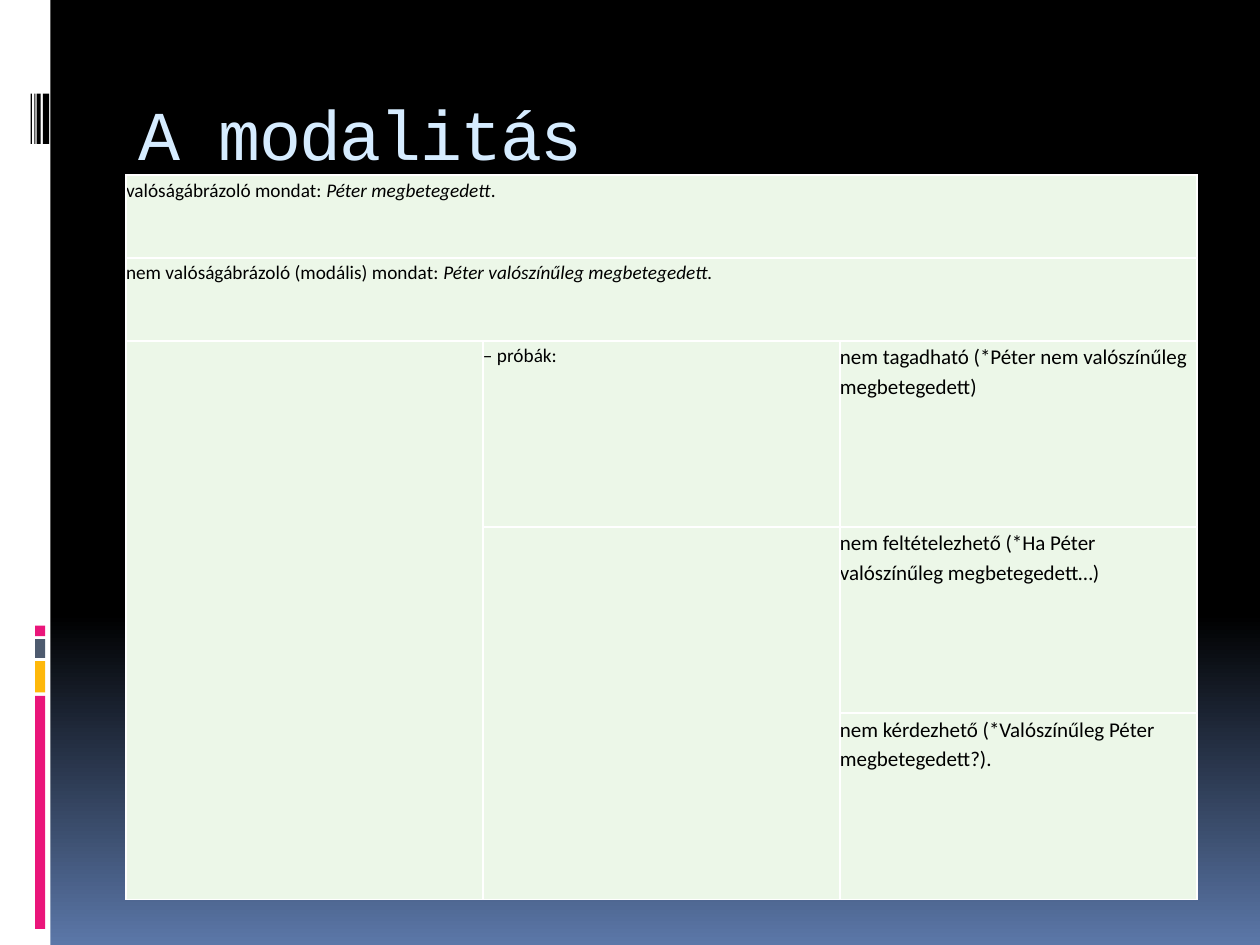
"""Build the slide on modality: side strip, title and table of sentence types."""
import pptx
import pptx.dml.color
import pptx.enum.shapes
import pptx.enum.text
import pptx.oxml
import pptx.oxml.ns
import pptx.util

Pt = pptx.util.Pt

TITLE = "A modalitás"
STATEMENTS = [
    [("valóságábrázoló mondat: ", False), ("Péter megbetegedett", True), (".", False)],
    [("nem valóságábrázoló (modális) mondat: ", False),
     ("Péter valószínűleg megbetegedett.", True)],
]
TESTS_LABEL = "–\u00a0próbák:\u00a0"
TESTS = [
    "nem tagadható (*Péter nem valószínűleg megbetegedett)",
    "nem feltételezhető (*Ha Péter valószínűleg megbetegedett…)",
    "nem kérdezhető (*Valószínűleg Péter megbetegedett?).",
]
ENTRIES = {(row, 0): (11, runs) for row, runs in enumerate(STATEMENTS)}
ENTRIES[2, 1] = (11, [(TESTS_LABEL, False)])
ENTRIES.update({(row, 2): (12, [(test, False)]) for row, test in enumerate(TESTS, 2)})
MERGES = [((0, 0), (0, 2)), ((1, 0), (1, 2)), ((2, 0), (4, 0)), ((3, 1), (4, 1))]

STRIP = (0, 0, 28.8, 540, "FFFFFF")
ACCENTS = [(357.6, 6, "EA157A"), (365.2, 10.8, "4E5B6F"),
           (377.8, 17.9, "FEB80A"), (397.6, 133.2, "EA157A")]
BARS = [(17.5, 0.7), (19.6, 0.7), (21, 2.2), (24.5, 3.6)]
COLUMN_WIDTHS = [204] * 3
ROW_HEIGHTS = [47.4] * 2 + [106.4] * 3
NO_MARGINS = {f"margin_{side}": 0 for side in ("left", "top", "right", "bottom")}


def rgb(value):
    return pptx.dml.color.RGBColor.from_string(value)


def apply(target, formats):
    for name, value in formats.items():
        setattr(target, name, value)


def add_block(slide, left, top, width, height, color):
    block = slide.shapes.add_shape(
        pptx.enum.shapes.MSO_SHAPE.RECTANGLE, Pt(left), Pt(top), Pt(width), Pt(height))
    block.shadow.inherit = False
    block.fill.solid()
    block.fill.fore_color.rgb = rgb(color)
    block.line.fill.background()


def add_run(paragraph, text, font, size, color, italic=False):
    run = paragraph.add_run()
    run.text = text
    apply(run.font, {"name": font, "size": Pt(size), "italic": italic})
    run.font.color.rgb = rgb(color)
    return run


def add_background(slide):
    fill = slide.background.fill
    fill.gradient()
    fill.gradient_angle = 270
    for stop, (position, color) in zip(fill.gradient_stops, [(0.65, "000000"), (1, "5B77A8")]):
        stop.position = position
        stop.color.rgb = rgb(color)


def add_title(slide):
    frame = slide.shapes.add_textbox(Pt(72), Pt(40), Pt(612), Pt(72)).text_frame
    apply(frame, {"word_wrap": True,
                  "vertical_anchor": pptx.enum.text.MSO_ANCHOR.MIDDLE})
    title = add_run(frame.paragraphs[0], TITLE, "Courier New", 40, "D6ECFF")
    title.font._element.set("spc", "-100")


def format_cell(cell):
    apply(cell, NO_MARGINS)
    properties = cell._tc.get_or_add_tcPr()
    for edge in ("lnL", "lnR", "lnT", "lnB"):
        properties.append(pptx.oxml.parse_xml(
            f'<a:{edge} {pptx.oxml.ns.nsdecls("a")} w="12700"><a:solidFill>'
            f'<a:srgbClr val="FFFFFF"/></a:solidFill></a:{edge}>'))
    cell.fill.solid()
    cell.fill.fore_color.rgb = rgb("ECF7E8")


def add_table(slide):
    table = slide.shapes.add_table(
        len(ROW_HEIGHTS), len(COLUMN_WIDTHS), Pt(72), Pt(100),
        Pt(sum(COLUMN_WIDTHS)), Pt(sum(ROW_HEIGHTS))).table
    apply(table, {"first_row": False, "horz_banding": False})
    for column, width in zip(table.columns, COLUMN_WIDTHS):
        column.width = Pt(width)
    for row, height in zip(table.rows, ROW_HEIGHTS):
        row.height = Pt(height)
    for cell in table.iter_cells():
        format_cell(cell)
    for first, last in MERGES:
        table.cell(*first).merge(table.cell(*last))
    for place, (size, runs) in ENTRIES.items():
        paragraph = table.cell(*place).text_frame.paragraphs[0]
        paragraph.line_spacing = 1.15
        for text, italic in runs:
            add_run(paragraph, text, "Calibri", size, "000000", italic)


def main():
    deck = pptx.Presentation()
    apply(deck, {"slide_width": Pt(720), "slide_height": Pt(540)})
    slide = deck.slides.add_slide(deck.slide_layouts[6])
    add_background(slide)
    add_block(slide, *STRIP)
    for top, height, color in ACCENTS:
        add_block(slide, 20, top, 5.8, height, color)
    for left, width in BARS:
        add_block(slide, left, 53.5, width, 28.8, "000000")
    add_title(slide)
    add_table(slide)
    deck.save("out.pptx")


if __name__ == "__main__":
    main()
